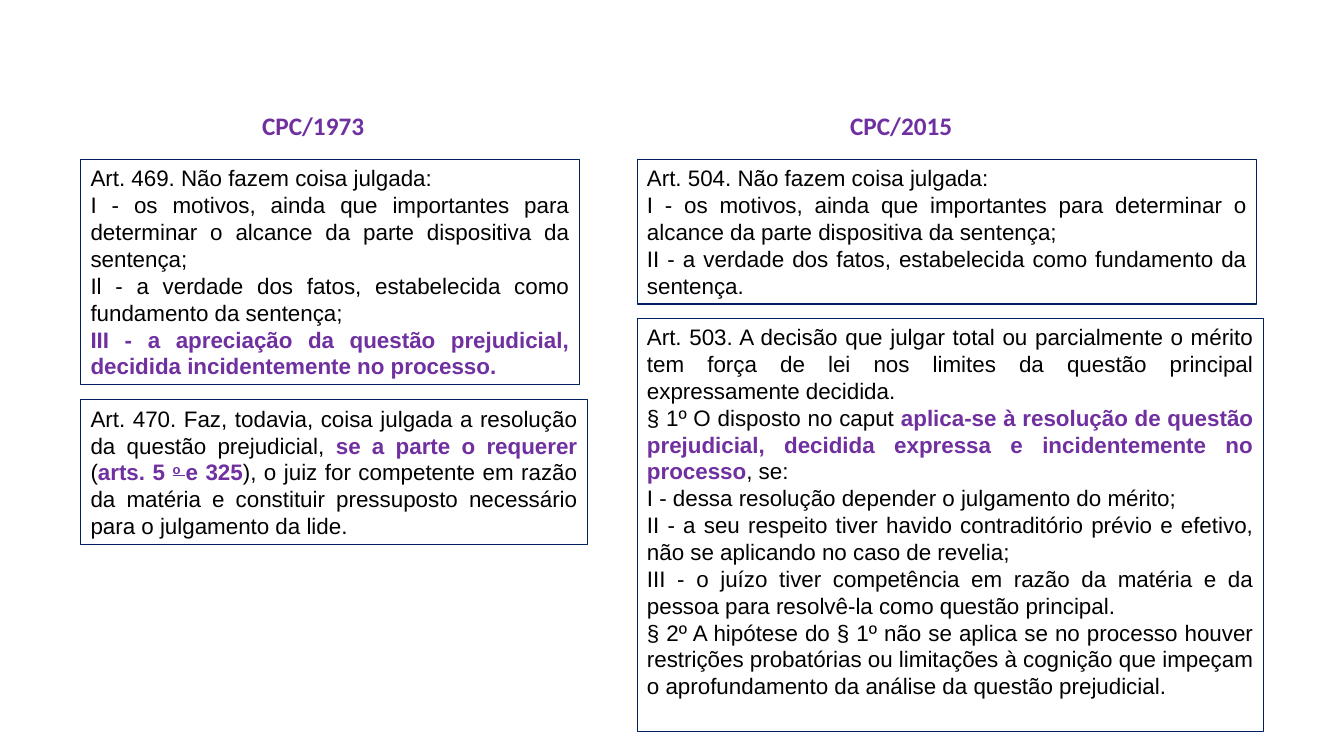
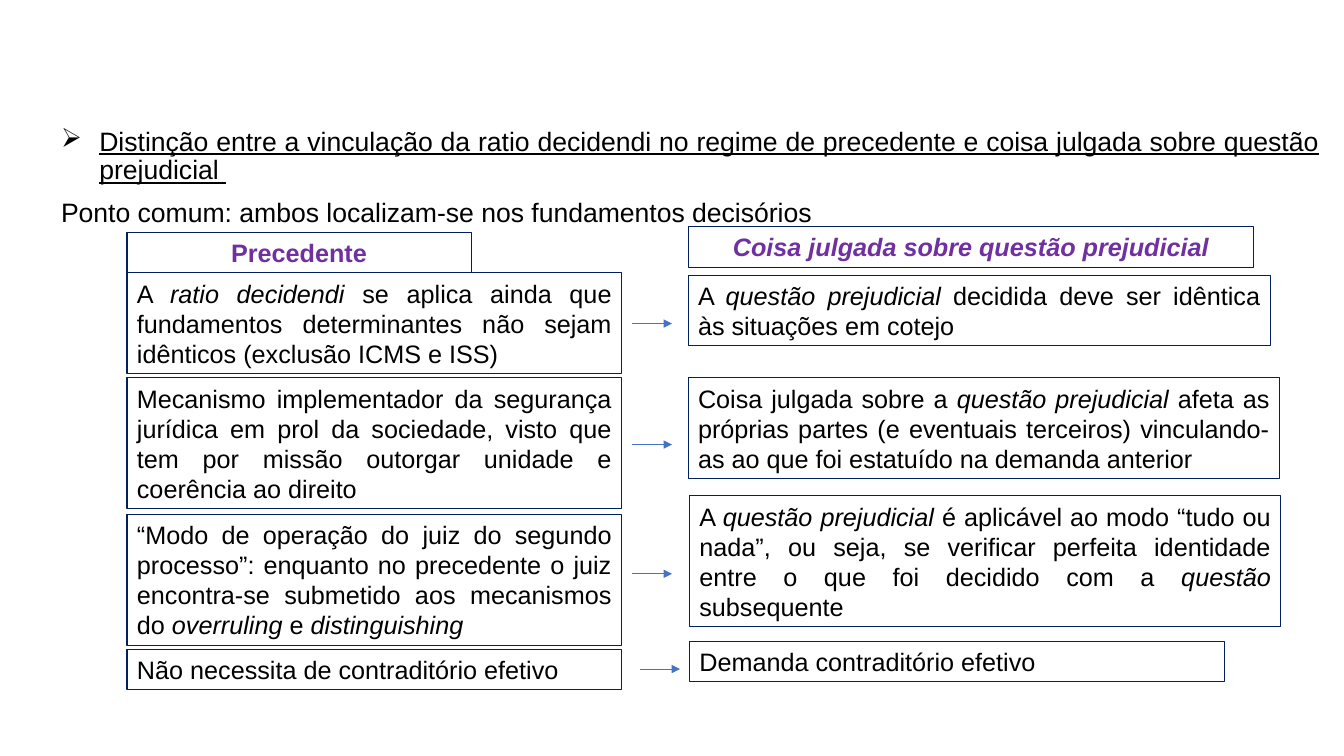
from dataclasses import dataclass, replace
from typing import Optional

from pptx import Presentation
from pptx.dml.color import RGBColor
from pptx.enum.shapes import MSO_CONNECTOR, MSO_SHAPE
from pptx.enum.text import MSO_ANCHOR, PP_ALIGN
from pptx.oxml.ns import qn
from pptx.util import Inches, Pt
from lxml.etree import SubElement

BLACK = RGBColor(0x00, 0x00, 0x00)
PURPLE = RGBColor(0x70, 0x30, 0xA0)
NAVY = RGBColor(0x00, 0x20, 0x60)
BLUE = RGBColor(0x44, 0x72, 0xC4)

WIDTH, HEIGHT = Inches(13.33), Inches(7.5)
LINE_FACTOR = 1.2   # line height as a multiple of the text size
PADDING = 7.2       # top and bottom insets together, in points
ARTICLE_SIZE, COMPARISON_SIZE = 16, 18


@dataclass(frozen=True)
class Run:
    text: str
    bold: bool = False
    italic: bool = False
    underline: bool = False
    color: RGBColor = BLACK
    raised: bool = False


Paragraph = tuple[Run, ...]


@dataclass(frozen=True)
class Passage:
    """Left, top and width are percentages of the slide; height follows from lines."""
    left: float
    top: float
    width: float
    lines: int
    paragraphs: tuple[Paragraph, ...]
    align: PP_ALIGN = PP_ALIGN.JUSTIFY


@dataclass(frozen=True)
class Arrow:
    start: float
    end: float
    level: float


def across(share: float) -> int:
    return round(WIDTH * share / 100)


def down(share: float) -> int:
    return round(HEIGHT * share / 100)


def plain(text: str) -> Paragraph:
    return (Run(text),)


def strong(text: str, **style) -> Run:
    return Run(text, bold=True, color=PURPLE, **style)


def italic(text: str) -> Run:
    return Run(text, italic=True)


def write(frame, paragraphs: tuple[Paragraph, ...], *, size: float, font: str = "Arial",
          align: PP_ALIGN = PP_ALIGN.JUSTIFY, line_spacing: Optional[float] = None,
          space_before: float = 0, bullet: str = "") -> None:
    """Fill a text frame; the bullet goes on its first paragraph only."""
    frame.word_wrap = True
    frame.vertical_anchor = MSO_ANCHOR.TOP
    for index, runs in enumerate(paragraphs):
        paragraph = frame.add_paragraph() if index else frame.paragraphs[0]
        paragraph.alignment = align
        if line_spacing:
            paragraph.line_spacing = line_spacing
        if index and space_before:
            paragraph.space_before = Pt(space_before)
        if bullet and not index:
            properties = paragraph._p.get_or_add_pPr()
            properties.set("marL", str(Inches(0.38)))
            properties.set("indent", str(-Inches(0.38)))
            SubElement(properties, qn("a:buChar")).set("char", bullet)
        for part in runs:
            run = paragraph.add_run()
            run.text = part.text
            run.font.name = font
            run.font.size = Pt(size)
            run.font.bold = part.bold
            run.font.italic = part.italic
            run.font.underline = part.underline
            run.font.color.rgb = part.color
            if part.raised:
                run.font._element.set("baseline", "30000")


def add_text(slide, left: float, top: float, width: float, height: float,
             paragraphs: tuple[Paragraph, ...], **style) -> None:
    label = slide.shapes.add_textbox(across(left), down(top), across(width), down(height))
    write(label.text_frame, paragraphs, **style)


def add_passage(slide, passage: Passage, size: float) -> None:
    height = Pt(passage.lines * size * LINE_FACTOR + PADDING)
    frame = slide.shapes.add_shape(MSO_SHAPE.RECTANGLE, across(passage.left),
                                   down(passage.top), across(passage.width), height)
    frame.shadow.inherit = False
    frame.fill.background()
    frame.line.color.rgb = NAVY
    frame.line.width = Pt(0.75)
    write(frame.text_frame, passage.paragraphs, size=size, align=passage.align)


def add_arrow(slide, arrow: Arrow) -> None:
    level = down(arrow.level)
    connector = slide.shapes.add_connector(MSO_CONNECTOR.STRAIGHT, across(arrow.start), level,
                                           across(arrow.end), level)
    connector.line.color.rgb = BLUE
    connector.line.width = Pt(0.5)
    SubElement(connector.line._get_or_add_ln(), qn("a:tailEnd")).set("type", "triangle")
    SubElement(connector._element.spPr, qn("a:effectLst"))


OLD_CODE, NEW_CODE = 6, 47.4
ARTICLES_TOP = 21.1
REASONS = plain("I - os motivos, ainda que importantes para determinar o alcance da parte "
                "dispositiva da sentença;")

ARTICLES = (
    Passage(OLD_CODE, ARTICLES_TOP, 37.1, 8, (
        plain("Art. 469. Não fazem coisa julgada:"),
        REASONS,
        plain("Il - a verdade dos fatos, estabelecida como fundamento da sentença;"),
        (strong("III - a apreciação da questão prejudicial, decidida incidentemente "
                "no processo."),),
    )),
    Passage(NEW_CODE, ARTICLES_TOP, 46.1, 5, (
        plain("Art. 504. Não fazem coisa julgada:"),
        REASONS,
        plain("II - a verdade dos fatos, estabelecida como fundamento da sentença."),
    )),
    Passage(NEW_CODE, 42.1, 46.6, 15, (
        plain("Art. 503. A decisão que julgar total ou parcialmente o mérito tem força de lei "
              "nos limites da questão principal expressamente decidida."),
        (Run("§ 1º O disposto no caput "),
         strong("aplica-se à resolução de questão prejudicial, decidida expressa e "
                "incidentemente no processo"),
         Run(", se:")),
        plain("I - dessa resolução depender o julgamento do mérito;"),
        plain("II - a seu respeito tiver havido contraditório prévio e efetivo, não se "
              "aplicando no caso de revelia;"),
        plain("III - o juízo tiver competência em razão da matéria e da pessoa para "
              "resolvê-la como questão principal."),
        plain("§ 2º A hipótese do § 1º não se aplica se no processo houver restrições "
              "probatórias ou limitações à cognição que impeçam o aprofundamento da análise "
              "da questão prejudicial."),
    )),
    Passage(OLD_CODE, 52.9, 37.7, 5, (
        (Run("Art. 470. Faz, todavia, coisa julgada a resolução da questão prejudicial, "),
         strong("se a parte o requerer "),
         Run("("),
         strong("arts. 5 "),
         strong("o ", underline=True, raised=True),
         strong("e 325"),
         Run("), o juiz for competente em razão da matéria e constituir pressuposto "
             "necessário para o julgamento da lide.")),
    )),
)

PRECEDENT, RES_JUDICATA = 9.45, 51.2
PRECEDENT_WIDTH = 36.8
ISSUE = italic("questão prejudicial")

COMPARISON = (
    Passage(PRECEDENT, 30.7, 25.6, 1, ((strong("Precedente"),),), PP_ALIGN.CENTER),
    Passage(PRECEDENT, 36.1, PRECEDENT_WIDTH, 3, (
        (Run("A "), italic("ratio decidendi"),
         Run(" se aplica ainda que fundamentos determinantes não sejam idênticos "
             "(exclusão ICMS e ISS)")),
    )),
    Passage(PRECEDENT, 50, PRECEDENT_WIDTH, 4, (
        plain("Mecanismo implementador da segurança jurídica em prol da sociedade, visto que "
              "tem por missão outorgar unidade e coerência ao direito"),
    )),
    Passage(PRECEDENT, 68, PRECEDENT_WIDTH, 4, (
        (Run("“Modo de operação do juiz do segundo processo”: enquanto no precedente o juiz "
             "encontra-se submetido aos mecanismos do "),
         italic("overruling "), Run("e "), italic("distinguishing")),
    )),
    Passage(PRECEDENT, 85.9, PRECEDENT_WIDTH, 1, (
        plain("Não necessita de contraditório efetivo"),
    ), PP_ALIGN.LEFT),
    Passage(RES_JUDICATA, 30, 42.1, 1, (
        (strong("Coisa julgada sobre questão prejudicial", italic=True),),
    ), PP_ALIGN.CENTER),
    Passage(RES_JUDICATA, 36.4, 43.3, 2, (
        (Run("A "), ISSUE, Run(" decidida deve ser idêntica às situações em cotejo")),
    )),
    Passage(RES_JUDICATA, 50, 44, 3, (
        (Run("Coisa julgada sobre a "), ISSUE,
         Run(" afeta as próprias partes (e eventuais terceiros) vinculando-as ao que foi "
             "estatuído na demanda anterior")),
    )),
    Passage(RES_JUDICATA + 0.1, 65.6, 44, 4, (
        (Run("A "), ISSUE,
         Run(" é aplicável ao modo “tudo ou nada”, ou seja, se verificar perfeita identidade "
             "entre o que foi decidido com a "),
         italic("questão "), Run("subsequente")),
    )),
    Passage(RES_JUDICATA + 0.1, 84.8, 39.8, 1, (
        plain("Demanda contraditório efetivo"),
    ), PP_ALIGN.LEFT),
)

FIRST_ARROW = Arrow(47, 50, 42.8)
ARROWS = (
    FIRST_ARROW,
    replace(FIRST_ARROW, level=58.8),
    replace(FIRST_ARROW, level=75.9),
    Arrow(47.6, 50.6, 88.5),
)

INTRODUCTION = (
    (Run("Distinção entre a vinculação da ratio decidendi no regime de precedente e coisa "
         "julgada sobre questão prejudicial ", underline=True),),
    plain("Ponto comum: ambos localizam-se nos fundamentos decisórios"),
)


def build_articles(slide) -> None:
    for code, left, width in (("CPC/1973", 7, 32.6), ("CPC/2015", 49.4, 35.3)):
        add_text(slide, left, 13.9, width, 5.3, ((strong(code),),), size=18,
                 font="Calibri", align=PP_ALIGN.CENTER)
    for article in ARTICLES:
        add_passage(slide, article, ARTICLE_SIZE)


def build_comparison(slide) -> None:
    add_text(slide, 3.8, 16.3, 95.1, 14, INTRODUCTION, size=19,
             line_spacing=0.9, space_before=10, bullet="➢")
    for passage in COMPARISON:
        add_passage(slide, passage, COMPARISON_SIZE)
    for arrow in ARROWS:
        add_arrow(slide, arrow)


def main() -> None:
    deck = Presentation()
    deck.slide_width, deck.slide_height = WIDTH, HEIGHT
    blank = deck.slide_layouts[6]
    for build in (build_articles, build_comparison):
        build(deck.slides.add_slide(blank))
    deck.save("out.pptx")


if __name__ == "__main__":
    main()
